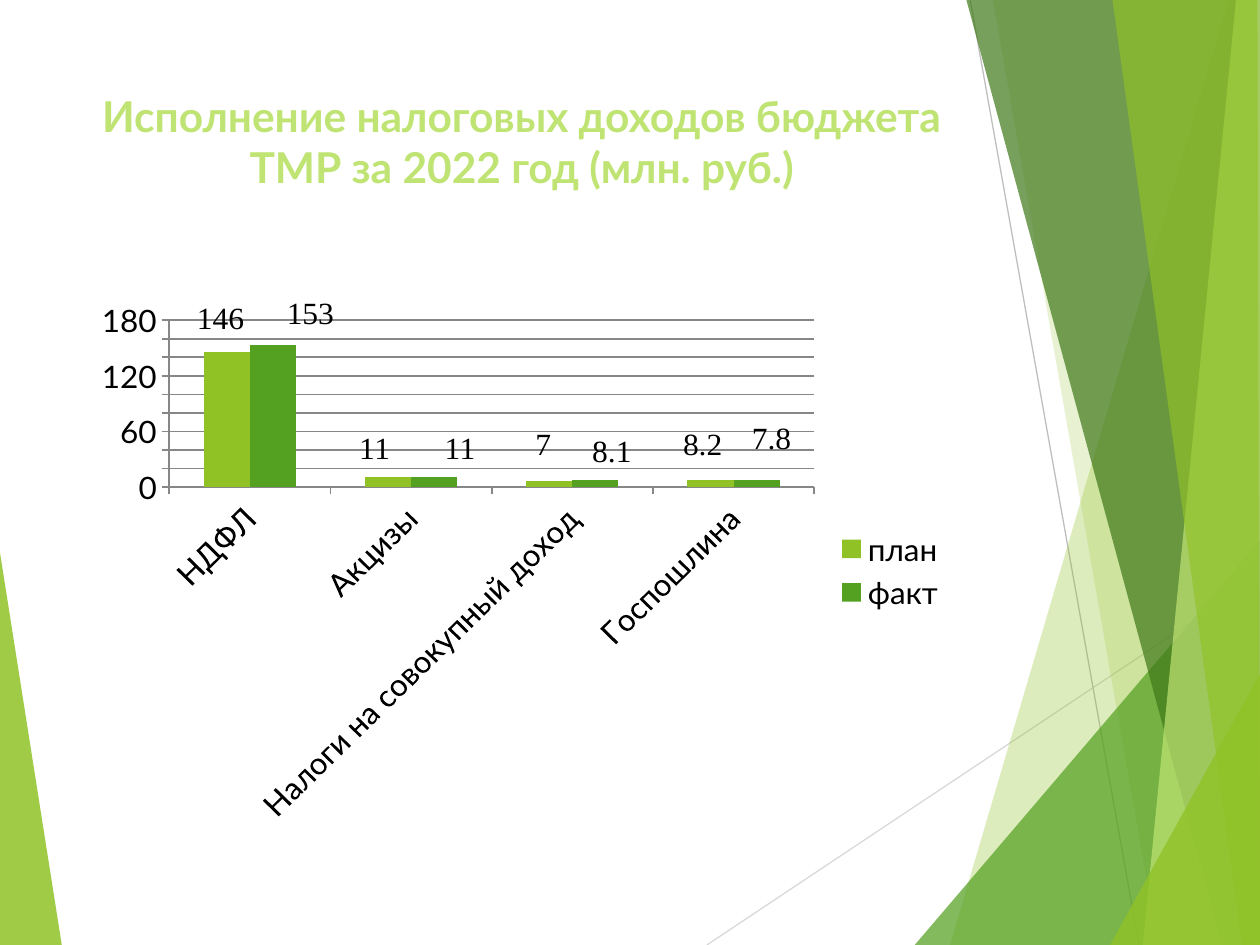
from typing import NamedTuple

from lxml.etree import SubElement
from pptx import Presentation
from pptx.chart.data import CategoryChartData as Data
from pptx.dml.color import RGBColor
from pptx.enum.chart import XL_CHART_TYPE as Kind
from pptx.enum.chart import XL_LABEL_POSITION as Place
from pptx.enum.chart import XL_LEGEND_POSITION as Side
from pptx.enum.chart import XL_TICK_MARK as Tick
from pptx.enum.text import MSO_ANCHOR as Anchor
from pptx.enum.text import PP_ALIGN as Align
from pptx.oxml import parse_xml
from pptx.oxml.ns import nsdecls, qn
from pptx.util import Inches, Pt

LIME = RGBColor(0x90, 0xC2, 0x26)
GREEN = RGBColor(0x54, 0xA0, 0x21)
DARK = RGBColor(0x3F, 0x78, 0x19)
PALE = RGBColor(0xC0, 0xE4, 0x74)
SILVER = RGBColor(0xD9, 0xD9, 0xD9)
GREY = RGBColor(0xBF, 0xBF, 0xBF)
AXIS = RGBColor(0x87, 0x87, 0x87)
BLACK = RGBColor(0, 0, 0)

WIDE, HIGH = Inches(10), Inches(7.5)
Spot = tuple[float, float]


class Facet(NamedTuple):
    """A polygon; points are percents of the slide's width and height."""
    color: RGBColor
    alpha: int
    spots: list[Spot]


class Ray(NamedTuple):
    color: RGBColor
    start: Spot
    end: Spot


class Bars(NamedTuple):
    """A series; shifts move each label, in percents of the chart's size."""
    name: str
    color: RGBColor
    values: list[float]
    shifts: list[Spot]


DECOR = [
    Facet(LIME, 85, [(0, 58.5), (4.9, 100), (0, 100)]),
    Ray(SILVER, (56.1, 100), (100, 61)),
    Ray(GREY, (77, 0), (90.4, 100)),
    Facet(LIME, 30, [(97.5, 0), (75.4, 100), (100, 100), (100, 0)]),
    Facet(LIME, 20, [(78.8, 0), (91.9, 100), (100, 100), (100, 0)]),
    Facet(GREEN, 72, [(72.6, 100), (100, 57.2), (100, 100)]),
    Facet(DARK, 70, [(76.7, 0), (97, 100), (100, 100), (100, 0)]),
    Facet(PALE, 70, [(98.1, 0), (90.7, 100), (100, 100), (100, 0)]),
    Facet(LIME, 65, [(88.3, 0), (98.6, 100), (100, 100), (99.8, 0)]),
    Facet(LIME, 80, [(88.1, 100), (100, 71.3), (100, 100)]),
]
CATS = ["НДФЛ", "Акцизы", "Налоги на совокупный доход", "Госпошлина"]
SERIES = [
    Bars("план", LIME, [146, 11, 7, 8.2],
         [(-0.7, -2.2), (-1.5, -1.2), (-0.7, -2.7), (-0.9, -2.4)]),
    Bars("факт", GREEN, [153, 11, 8.1, 7.8],
         [(4.3, -1.8), (3, -1.2), (1.9, -1.1), (1.7, -3.7)]),
]
TITLE = "Исполнение налоговых доходов бюджета ТМР за 2022 год (млн. руб.)"


def emu(spot: Spot) -> tuple[int, int]:
    return round(spot[0] * WIDE / 100), round(spot[1] * HIGH / 100)


def box(left: float, top: float, width: float, height: float) -> tuple:
    return *emu((left, top)), *emu((width, height))


def draw_facet(slide, facet: Facet) -> None:
    first, *rest = map(emu, facet.spots)
    pen = slide.shapes.build_freeform(*first)
    pen.add_line_segments(rest, close=True)
    shape = pen.convert_to_shape()
    shape.shadow.inherit = False
    shape.fill.solid()
    shape.fill.fore_color.rgb = facet.color
    shape.line.fill.background()
    tint = next(shape._element.spPr.iter(qn("a:srgbClr")))
    SubElement(tint, qn("a:alpha"), val=str(facet.alpha * 1000))


def draw_ray(slide, ray: Ray) -> None:
    line = slide.shapes.add_connector(1, *emu(ray.start), *emu(ray.end))
    line.line.color.rgb = ray.color
    line.line.width = Pt(0.75)
    SubElement(line._element.spPr, qn("a:effectLst"))


def draw_title(slide) -> None:
    frame = slide.shapes.add_textbox(*box(6.7, 8.9, 69.4, 19.2)).text_frame
    frame.word_wrap = True
    frame.vertical_anchor = Anchor.TOP
    par = frame.paragraphs[0]
    par.alignment = Align.CENTER
    run = par.add_run()
    run.text = TITLE
    font = run.font
    font.name, font.size, font.bold = "Lato", Pt(24.3), True
    font.color.rgb = PALE


def layout(x: float, y: float):
    """Make a manual label layout from a shift in percents."""
    node = parse_xml(f"<c:layout {nsdecls('c')}><c:manualLayout/></c:layout>")
    for name, value in (("x", x), ("y", y)):
        SubElement(node[0], qn(f"c:{name}"), val=str(round(value / 100, 3)))
    return node


def set_font(font, name: str) -> None:
    font.name, font.size = name, Pt(18)
    font.color.rgb = BLACK


def set_line(line) -> None:
    line.color.rgb = AXIS
    line.width = Pt(1)


def style_bars(series, bars: Bars) -> None:
    series.format.fill.solid()
    series.format.fill.fore_color.rgb = bars.color
    labels = series.data_labels
    labels.show_value = True
    set_font(labels.font, "Times New Roman")
    for num in range(len(bars.values)):
        label = series.points[num].data_label
        set_font(label.font, "Times New Roman")
        label.position = Place.OUTSIDE_END
    for node, shift in zip(series._element.iter(qn("c:dLbl")), bars.shifts):
        node.insert(1, layout(*shift))
    for lead in series._element.iter(qn("c:showLeaderLines")):
        lead.set("val", "0")


def style_axis(axis) -> None:
    axis.major_tick_mark = Tick.OUTSIDE
    axis.minor_tick_mark = Tick.NONE
    set_line(axis.format.line)
    set_font(axis.tick_labels.font, "Lato")


def draw_chart(slide) -> None:
    data = Data()
    data.categories = CATS
    for bars in SERIES:
        data.add_series(bars.name, bars.values)
    chart = slide.shapes.add_chart(
        Kind.COLUMN_CLUSTERED, *box(6.7, 31.5, 69.4, 56.5), data).chart
    set_font(chart.font, "Lato")
    chart.has_title = False
    chart.has_legend = True
    chart.legend.position = Side.RIGHT
    chart.legend.include_in_layout = False
    set_font(chart.legend.font, "Lato")

    plot = chart.plots[0]
    plot.gap_width, plot.overlap = 150, 0
    plot.vary_by_categories = False
    for series, bars in zip(plot.series, SERIES):
        style_bars(series, bars)

    cat, val = chart.category_axis, chart.value_axis
    for axis in (cat, val):
        style_axis(axis)
    turn = next(cat._element.iter(qn("a:bodyPr")))
    turn.set("rot", str(-45 * 60000))
    turn.set("vert", "horz")
    val.minimum_scale, val.maximum_scale, val.major_unit = 0, 180, 20
    val.has_major_gridlines = True
    set_line(val.major_gridlines.format.line)


def main() -> None:
    deck = Presentation()
    deck.slide_width, deck.slide_height = WIDE, HIGH
    slide = deck.slides.add_slide(deck.slide_layouts[6])
    for item in DECOR:
        if isinstance(item, Facet):
            draw_facet(slide, item)
        else:
            draw_ray(slide, item)
    draw_title(slide)
    draw_chart(slide)
    deck.save("out.pptx")


if __name__ == "__main__":
    main()
